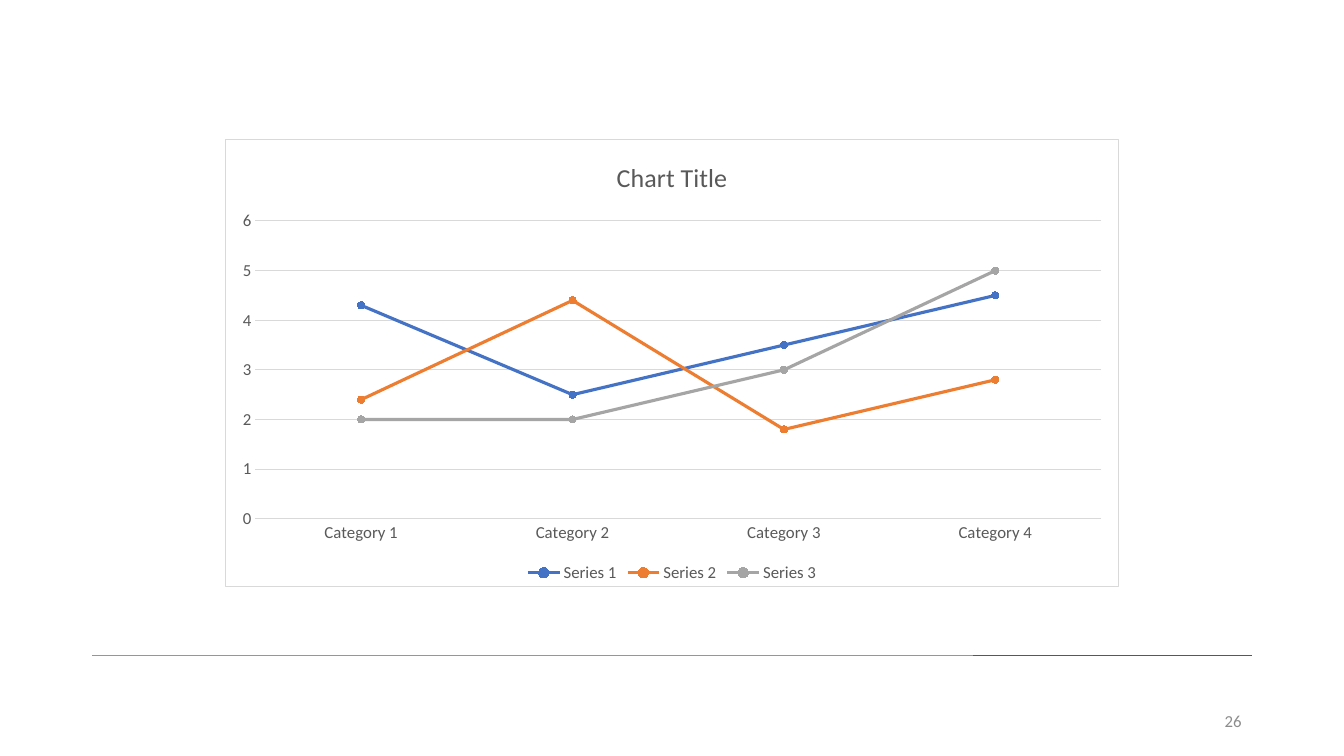
from lxml import etree
from pptx import Presentation
from pptx.chart.data import CategoryChartData as Data
from pptx.dml.color import RGBColor
from pptx.enum.chart import XL_CHART_TYPE as Kind, XL_LEGEND_POSITION as Spot
from pptx.enum.chart import XL_MARKER_STYLE as Mark, XL_TICK_MARK as Tick
from pptx.enum.shapes import MSO_CONNECTOR as Link
from pptx.enum.text import MSO_ANCHOR as Anchor, PP_ALIGN as Align
from pptx.oxml import parse_xml
from pptx.oxml.ns import nsdecls, qn
from pptx.util import Pt

BLUE, ORANGE, GREY = "4472C4", "ED7D31", "A5A5A5"
INK, RULE = "595959", "D9D9D9"


def tint(code):
    return RGBColor.from_string(code)


def draw(line, color, width):
    line.color.rgb = tint(color)
    line.width = Pt(width)


def write(frame, text, size=12, color=INK, align=Align.LEFT, face="Calibri"):
    para = frame.paragraphs[0]
    para.alignment = align
    run = para.add_run()
    run.text = text
    style(run.font, size, color, face)


def style(font, size=12, color=INK, face="Calibri"):
    font.size, font.name, font.bold = Pt(size), face, False
    font.color.rgb = tint(color)


class Page:
    """Holds the slide and adds styled elements to it."""

    def __init__(self, deck):
        self.slide = deck.slides.add_slide(deck.slide_layouts[6])
        self.shapes = self.slide.shapes

    def line(self, left, right, top, color):
        rule = self.shapes.add_connector(
            Link.STRAIGHT, Pt(left), Pt(top), Pt(right), Pt(top))
        draw(rule.line, color, 1)
        etree.SubElement(rule.element.spPr, qn("a:effectLst"))

    def label(self, box, text, **form):
        frame = self.shapes.add_textbox(*map(Pt, box)).text_frame
        frame.word_wrap = True
        frame.vertical_anchor = Anchor.MIDDLE
        write(frame, text, **form)

    def chart(self, box, title, cats, rows):
        data = Data()
        data.categories = cats
        for name, vals, _ in rows:
            data.add_series(name, vals)
        chart = self.shapes.add_chart(
            Kind.LINE_MARKERS, *map(Pt, box), data).chart
        style(chart.font)
        chart.has_title = True
        write(chart.chart_title.text_frame, title, size=18.6,
              align=Align.CENTER)
        chart.has_legend = True
        chart.legend.position = Spot.BOTTOM
        chart.legend.include_in_layout = False
        style(chart.legend.font)
        self.axes(chart)
        plot = chart.plots[0]
        plot.vary_by_categories = False
        for series, (_, _, color) in zip(plot.series, rows):
            series.smooth = False
            draw(series.format.line, color, 2.25)
            mark = series.marker
            mark.style, mark.size = Mark.CIRCLE, 5
            mark.format.fill.solid()
            mark.format.fill.fore_color.rgb = tint(color)
            draw(mark.format.line, color, 0.75)
        self.frame(chart)

    def axes(self, chart):
        cat, val = chart.category_axis, chart.value_axis
        for axis in (cat, val):
            axis.major_tick_mark = axis.minor_tick_mark = Tick.NONE
            style(axis.tick_labels.font)
        draw(cat.format.line, RULE, 0.75)
        val.format.line.fill.background()
        val.minimum_scale, val.maximum_scale, val.major_unit = 0, 6, 1
        val.has_major_gridlines = True
        draw(val.major_gridlines.format.line, RULE, 0.75)

    def frame(self, chart):
        """Give the chart area a white fill and a thin border."""
        chart.element.find(qn("c:chart")).addnext(parse_xml(
            f'<c:spPr {nsdecls("c", "a")}>'
            '<a:solidFill><a:srgbClr val="FFFFFF"/></a:solidFill>'
            f'<a:ln w="{Pt(0.75)}"><a:solidFill><a:srgbClr val="{RULE}"/>'
            '</a:solidFill></a:ln></c:spPr>'))


def main():
    deck = Presentation()
    deck.slide_width, deck.slide_height = Pt(960), Pt(540)
    page = Page(deck)
    page.line(66, 695.5, 468, ORANGE)
    page.line(695, 894, 468, "0070C0")
    page.label((864, 500.5, 30, 29), "26", color="8C8C8C", align=Align.RIGHT)
    page.chart((160.4, 99.5, 639.2, 320), "Chart Title",
               [f"Category {n}" for n in range(1, 5)],
               [("Series 1", (4.3, 2.5, 3.5, 4.5), BLUE),
                ("Series 2", (2.4, 4.4, 1.8, 2.8), ORANGE),
                ("Series 3", (2, 2, 3, 5), GREY)])
    deck.save("out.pptx")


if __name__ == "__main__":
    main()
